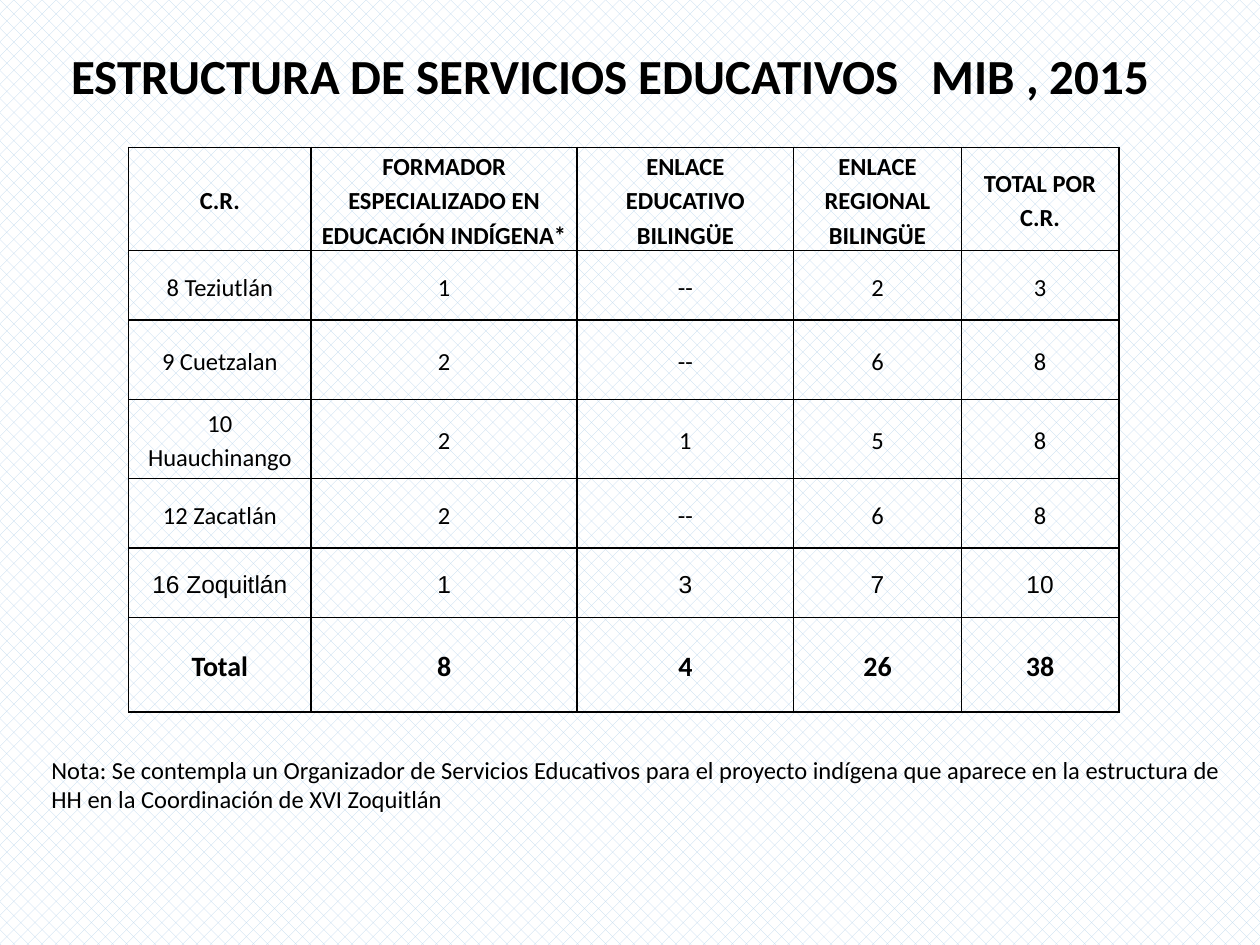
import pptx
import pptx.util
import pptx.dml.color
import pptx.enum.dml
import pptx.enum.text
import pptx.oxml
from pptx.util import Inches

COLORS = {"ink": "000000", "pattern": "BDD7EE", "paper": "FFFFFF"}
ALIGN = pptx.enum.text.PP_ALIGN
MIDDLE = pptx.enum.text.MSO_ANCHOR.MIDDLE


def rgb(name):
    return pptx.dml.color.RGBColor.from_string(COLORS[name])


def write(frame, text, size=14, font="Calibri", bold=False, align=ALIGN.LEFT, spacing=1.0):
    frame.word_wrap = True
    paragraph = frame.paragraphs[0]
    paragraph.alignment = align
    paragraph.line_spacing = spacing
    run = paragraph.add_run()
    run.text = text
    run.font.size = pptx.util.Pt(size)
    run.font.name = font
    run.font.bold = bold
    run.font.color.rgb = rgb("ink")


deck = pptx.Presentation()
deck.slide_width, deck.slide_height = Inches(10), Inches(7.5)
slide = deck.slides.add_slide(deck.slide_layouts[6])

# Patterned background
backdrop = slide.background.fill
backdrop.patterned()
backdrop.pattern = pptx.enum.dml.MSO_PATTERN.PERCENT_25
backdrop.fore_color.rgb = rgb("pattern")
backdrop.back_color.rgb = rgb("paper")

# Title
title = slide.shapes.add_textbox(Inches(0.47), Inches(0.39), Inches(9), Inches(0.46))
title.text_frame.vertical_anchor = MIDDLE
write(title.text_frame, "ESTRUCTURA DE SERVICIOS EDUCATIVOS   MIB , 2015",
      size=28, bold=True, spacing=0.9)

# Services by regional coordination
services = [
    ["C.R.", "FORMADOR ESPECIALIZADO EN EDUCACIÓN INDÍGENA*", "ENLACE EDUCATIVO BILINGÜE",
     "ENLACE REGIONAL BILINGÜE", "TOTAL POR C.R."],
    ["8 Teziutlán", "1", "--", "2", "3"],
    ["9 Cuetzalan", "2", "--", "6", "8"],
    ["10 Huauchinango", "2", "1", "5", "8"],
    ["12 Zacatlán", "2", "--", "6", "8"],
    ["16 Zoquitlán", "1", "3", "7", "10"],
    ["Total", "8", "4", "26", "38"],
]
row_formats = {0: {"bold": True}, 5: {"font": "Arial"}, 6: {"size": 16, "bold": True}}
column_widths = [1.45, 2.11, 1.72, 1.33, 1.25]
row_heights = [0.82, 0.55, 0.63, 0.63, 0.55, 0.55, 0.75]

table = slide.shapes.add_table(
    len(row_heights), len(column_widths), Inches(1.02), Inches(1.17),
    Inches(sum(column_widths)), Inches(sum(row_heights))).table
table.first_row = table.horz_banding = False
for column, width in zip(table.columns, column_widths):
    column.width = Inches(width)
for row, height in zip(table.rows, row_heights):
    row.height = Inches(height)

for r, values in enumerate(services):
    for c, value in enumerate(values):
        cell = table.cell(r, c)
        cell.vertical_anchor = MIDDLE
        cell.margin_left = cell.margin_right = Inches(0.07)
        cell.margin_top = cell.margin_bottom = 0
        write(cell.text_frame, value, align=ALIGN.CENTER, spacing=1.15,
              **row_formats.get(r, {}))
        # Borders come before the fill in the cell properties
        properties = cell._tc.get_or_add_tcPr()
        for side in ("lnL", "lnR", "lnT", "lnB"):
            properties.append(pptx.oxml.parse_xml(
                f'<a:{side} xmlns:a="http://schemas.openxmlformats.org/drawingml/2006/main" '
                f'w="12700"><a:solidFill><a:srgbClr val="{COLORS["ink"]}"/></a:solidFill>'
                f'</a:{side}>'))
        cell.fill.background()

# Footnote
note = slide.shapes.add_textbox(Inches(0.31), Inches(5.94), Inches(9.69), Inches(0.57))
write(note.text_frame, "Nota: Se contempla un Organizador de Servicios Educativos para el proyecto "
      "indígena que aparece en la estructura de HH en la Coordinación de XVI Zoquitlán")

deck.save("out.pptx")
